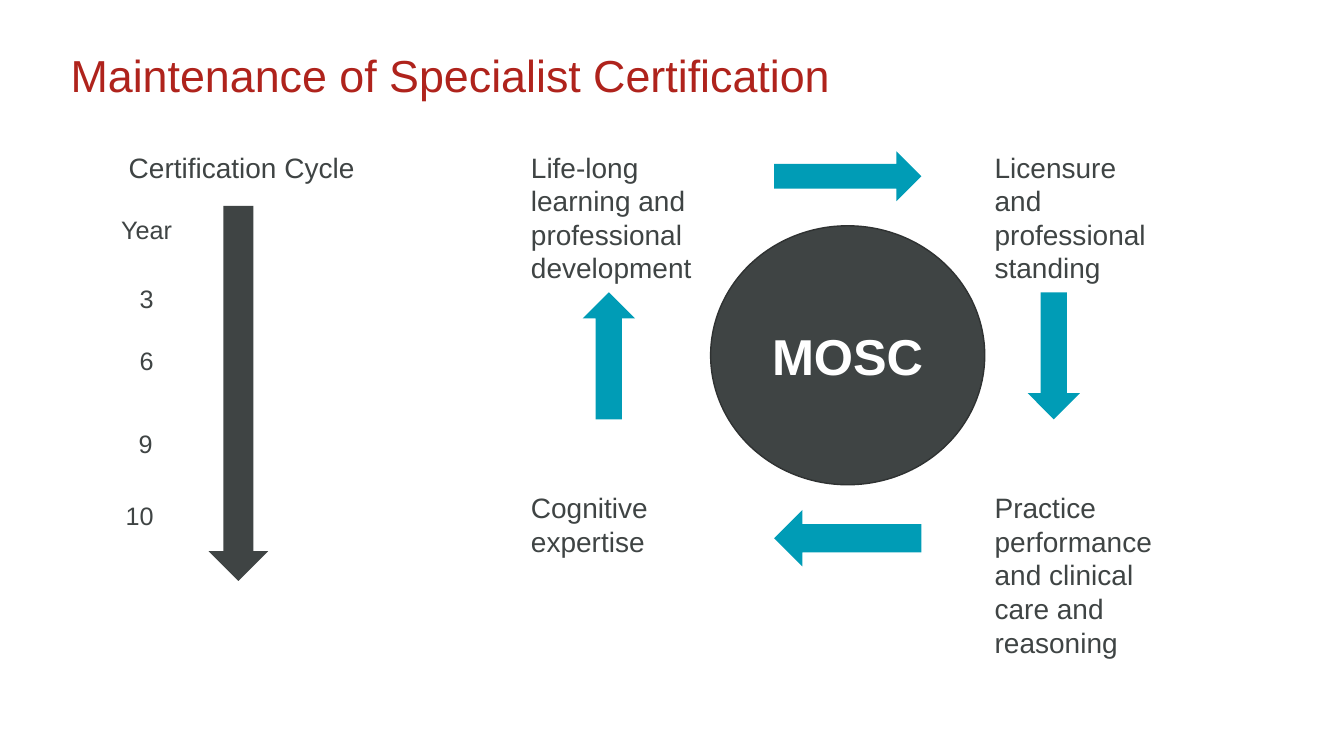
"""Build the Maintenance of Specialist Certification slide."""
import pptx
import pptx.util
import pptx.dml.color
import pptx.enum.shapes
import pptx.enum.text

Pt = pptx.util.Pt
RGBColor = pptx.dml.color.RGBColor
SHAPE = pptx.enum.shapes.MSO_SHAPE
ALIGN = pptx.enum.text.PP_ALIGN
ANCHOR = pptx.enum.text.MSO_ANCHOR

RED = RGBColor(0xAF, 0x23, 0x1C)
SLATE = RGBColor(0x3F, 0x44, 0x44)
OUTLINE = RGBColor(0x2F, 0x32, 0x32)
TEAL = RGBColor(0x00, 0x9C, 0xB6)
WHITE = RGBColor(0xFF, 0xFF, 0xFF)


def write(box, words, size, color, align, bold=False):
    box.text_frame.word_wrap = True
    para = box.text_frame.paragraphs[0]
    para.alignment = align
    span = para.add_run()
    span.text = words
    for name, value in {"name": "Arial", "size": Pt(size), "bold": bold}.items():
        setattr(span.font, name, value)
    span.font.color.rgb = color
    return para


def draw(kind, place, color):
    shape = page.shapes.add_shape(kind, *map(Pt, place))
    shape.shadow.inherit = False
    shape.fill.solid()
    shape.fill.fore_color.rgb = color
    shape.line.fill.background()
    return shape


deck = pptx.Presentation()
deck.slide_width, deck.slide_height = Pt(960), Pt(540)
page = deck.slides.add_slide(deck.slide_layouts[5])

title = page.shapes.title
title_place = {"left": 50.4, "top": 38.2, "width": 864, "height": 77.8}
for name, value in title_place.items():
    setattr(title, name, Pt(value))
for side in ("left", "top", "right", "bottom"):
    setattr(title.text_frame, "margin_" + side, 0)
title.text_frame.vertical_anchor = ANCHOR.TOP
title_para = write(title, "Maintenance of Specialist Certification", 32, RED, ALIGN.LEFT)
title_para.line_spacing = 0.9

draw(SHAPE.DOWN_ARROW, (149, 147, 42.6, 268), SLATE)

cycle_labels = [
    ("Certification Cycle", 48.2, 103.7, 249, 20),
    ("Year", 60.5, 149.8, 88.6, 18),
    ("3", 60.5, 198.7, 88.6, 18),
    ("6", 60.5, 243.4, 88.6, 18),
    ("9", 59.8, 302.4, 88.6, 18),
    ("10", 55.4, 354.2, 88.6, 18),
]
for words, left, top, width, size in cycle_labels:
    box = page.shapes.add_textbox(Pt(left), Pt(top), Pt(width), Pt(size * 1.6))
    write(box, words, size, SLATE, ALIGN.CENTER)

hub = draw(SHAPE.FLOWCHART_CONNECTOR, (507.6, 161.3, 195.8, 185), SLATE)
hub.line.color.rgb = OUTLINE
hub.line.width = Pt(1)
hub.text_frame.vertical_anchor = ANCHOR.MIDDLE
write(hub, "MOSC", 36, WHITE, ALIGN.CENTER, bold=True)

LEFT, RIGHT, UPPER, LOWER = 372.2, 703.4, 103.7, 347
parts = [
    ("Life-long learning and professional development", LEFT, UPPER, 57.6),
    ("Licensure and professional standing", RIGHT, UPPER, 57.6),
    ("Practice performance and clinical care and reasoning", RIGHT, LOWER, 74.9),
    ("Cognitive expertise", LEFT, LOWER, 40.3),
]
for words, left, top, height in parts:
    box = page.shapes.add_textbox(Pt(left), Pt(top), Pt(136), Pt(height))
    write(box, words, 20, SLATE, ALIGN.LEFT)

arrows = [
    (SHAPE.RIGHT_ARROW, (553, 108.2, 105.1, 35.5)),
    (SHAPE.DOWN_ARROW, (734, 208.8, 37.4, 90.7)),
    (SHAPE.UP_ARROW, (416.2, 208.8, 37.4, 90.7)),
    (SHAPE.LEFT_ARROW, (553, 364.3, 105.1, 40.3)),
]
for kind, place in arrows:
    draw(kind, place, TEAL)

deck.save("out.pptx")
